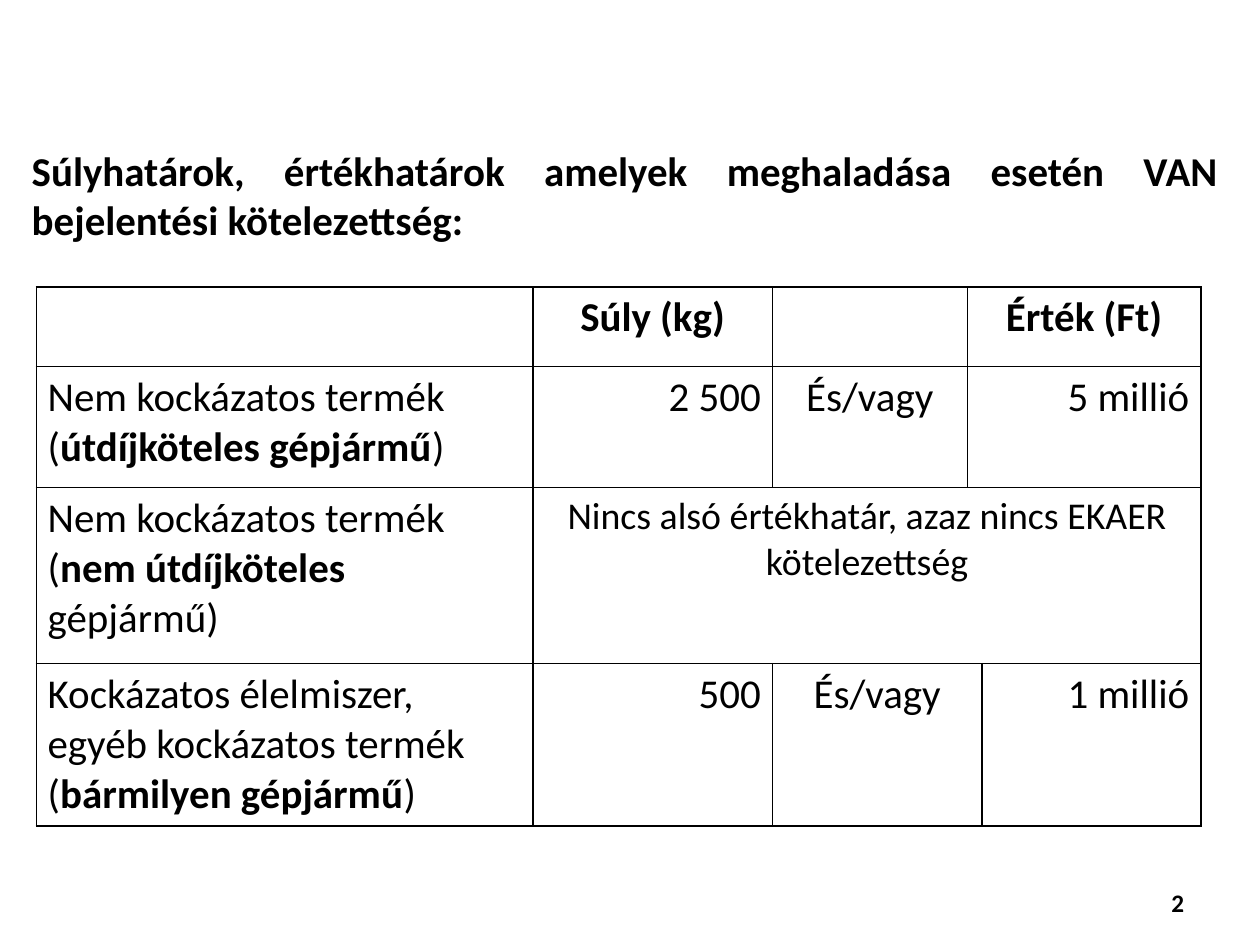
"""Build the slide on weight and value limits that require reporting."""
import pptx
import pptx.dml.color
import pptx.enum.text
import pptx.oxml
import pptx.oxml.ns
import pptx.util

Inches = pptx.util.Inches
ALIGN = pptx.enum.text.PP_ALIGN
BLACK = pptx.dml.color.RGBColor(0, 0, 0)
WHITE = pptx.dml.color.RGBColor(255, 255, 255)


def write(text_frame, text, size=26, alignment=ALIGN.LEFT):
    """Write one paragraph per line; asterisks switch bold on and off."""
    text_frame.word_wrap = True
    for index, line in enumerate(text.split("\n")):
        paragraph = text_frame.paragraphs[0] if index == 0 else text_frame.add_paragraph()
        paragraph.alignment = alignment
        for position, part in enumerate(line.split("*")):
            if part:
                run = paragraph.add_run()
                run.text = part
                run.font.name = "Calibri"
                run.font.size = pptx.util.Pt(size)
                run.font.bold = position % 2 == 1
                run.font.color.rgb = BLACK


def add_borders(cell):
    """Draw a thin black line on each side of a table cell."""
    properties = cell._tc.get_or_add_tcPr()
    for side in ("lnL", "lnR", "lnT", "lnB"):
        properties.append(pptx.oxml.parse_xml(
            f'<a:{side} {pptx.oxml.ns.nsdecls("a")} w="{pptx.util.Pt(1)}">'
            f'<a:solidFill><a:srgbClr val="{BLACK}"/></a:solidFill></a:{side}>'))


presentation = pptx.Presentation()
presentation.slide_width = Inches(11.11)
presentation.slide_height = Inches(8.33)
slide = presentation.slides.add_slide(presentation.slide_layouts[6])

page_number = slide.shapes.add_textbox(Inches(9.23), Inches(7.76), Inches(1.32), Inches(0.58))
page_number.text_frame.margin_left = page_number.text_frame.margin_right = Inches(0.11)
page_number.text_frame.margin_top = Inches(0.06)
write(page_number.text_frame, "*2*", size=16, alignment=ALIGN.RIGHT)

heading = slide.shapes.add_textbox(Inches(0.22), Inches(1.22), Inches(10.59), Inches(1))
heading.text_frame.margin_left = heading.text_frame.margin_right = Inches(0.06)
heading.text_frame.margin_top = Inches(0.06)
write(heading.text_frame,
      "*Súlyhatárok, értékhatárok amelyek meghaladása esetén VAN bejelentési kötelezettség:*",
      alignment=ALIGN.JUSTIFY)

COLUMN_WIDTHS = [4.38, 2.11, 1.72, 0.13, 1.93]
ROW_HEIGHTS = [0.7, 1.07, 1.55, 1.43]
MERGES = [(0, 3, 4), (1, 3, 4), (2, 1, 4), (3, 2, 3)]
CELLS = [
    (0, 1, "*Súly (kg)*", 26, ALIGN.CENTER),
    (0, 3, "*Érték (Ft)*", 26, ALIGN.CENTER),
    (1, 0, "Nem kockázatos termék\n(*útdíjköteles gépjármű*)", 26, ALIGN.LEFT),
    (1, 1, "2 500", 26, ALIGN.RIGHT),
    (1, 2, "És/vagy", 26, ALIGN.CENTER),
    (1, 3, "5 millió", 26, ALIGN.RIGHT),
    (2, 0, "Nem kockázatos termék\n(*nem útdíjköteles *gépjármű)", 26, ALIGN.LEFT),
    (2, 1, "Nincs alsó értékhatár, azaz nincs EKAER kötelezettség", 24, ALIGN.CENTER),
    (3, 0, "Kockázatos élelmiszer, egyéb kockázatos termék\n(*bármilyen gépjármű*)", 26, ALIGN.LEFT),
    (3, 1, "500", 26, ALIGN.RIGHT),
    (3, 2, "És/vagy", 26, ALIGN.CENTER),
    (3, 4, "1 millió", 26, ALIGN.RIGHT),
]

limits = slide.shapes.add_table(
    len(ROW_HEIGHTS), len(COLUMN_WIDTHS), Inches(0.32), Inches(2.53),
    Inches(sum(COLUMN_WIDTHS)), Inches(sum(ROW_HEIGHTS))).table
limits.first_row = False
limits.horz_banding = False
for column, width in zip(limits.columns, COLUMN_WIDTHS):
    column.width = Inches(width)
for row, height in zip(limits.rows, ROW_HEIGHTS):
    row.height = Inches(height)
for cell in limits.iter_cells():
    add_borders(cell)
    cell.fill.solid()
    cell.fill.fore_color.rgb = WHITE
for row, first, last in MERGES:
    limits.cell(row, first).merge(limits.cell(row, last))
for row, column, text, size, alignment in CELLS:
    write(limits.cell(row, column).text_frame, text, size=size, alignment=alignment)

presentation.save("out.pptx")
